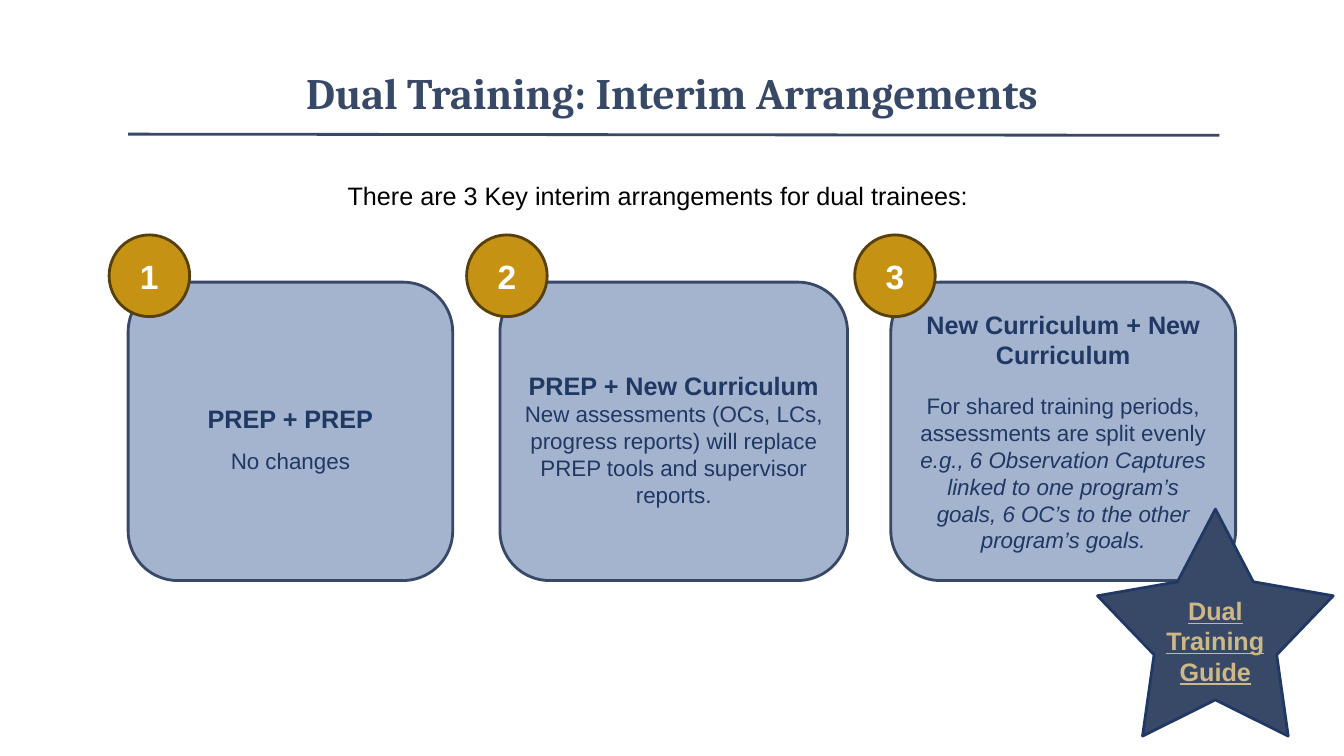
from lxml import etree
from pptx import Presentation
from pptx.dml import color
from pptx.enum import shapes, text
from pptx.oxml import ns
from pptx.util import Cm, Pt

HUES = {"navy": "384967", "ink": "1F3864", "card": "A4B3CE", "gold": "C69214",
        "brown": "574009", "sand": "CEB888", "white": "FFFFFF", "black": "000000"}
MID = text.PP_ALIGN.CENTER


def tint(name):
    """Return the named colour."""
    return color.RGBColor.from_string(HUES[name])


def add_run(para, words, size, hue, face="Arial", **marks):
    """Add one formatted run to a paragraph."""
    run = para.add_run()
    run.text = words
    run.font.name, run.font.size = face, Pt(size)
    run.font.color.rgb = tint(hue)
    for mark, value in marks.items():
        setattr(run.font, mark, value)


def add_form(slide, kind, box, fill, edge):
    """Add a flat outlined shape with centred text."""
    form = slide.shapes.add_shape(kind, *map(Cm, box))
    form.shadow.inherit = False
    form.fill.solid()
    form.fill.fore_color.rgb = tint(fill)
    form.line.color.rgb = tint(edge)
    form.line.width = Pt(2)
    frame = form.text_frame
    frame.word_wrap = True
    frame.vertical_anchor = text.MSO_ANCHOR.MIDDLE
    frame.paragraphs[0].alignment = MID
    return form


def add_head(slide, box):
    """Place the title and the rule below it."""
    left, top, width, height = box
    title = slide.shapes.title
    title.left, title.top, title.width, title.height = map(Cm, box)
    frame = title.text_frame
    frame.auto_size = text.MSO_AUTO_SIZE.NONE
    frame.vertical_anchor = text.MSO_ANCHOR.MIDDLE
    para = frame.paragraphs[0]
    para.alignment = MID
    add_run(para, "Dual Training: Interim Arrangements", 31, "navy", "Cambria", bold=True)
    rule = slide.shapes.add_connector(
        shapes.MSO_CONNECTOR.STRAIGHT, Cm(left + 0.84), Cm(top + 1.65),
        Cm(left + width - 0.74), Cm(top + 1.68))
    rule.line.color.rgb = tint("navy")
    rule.line.width = Pt(2)
    etree.SubElement(rule.element.spPr, ns.qn("a:effectLst"))


def add_lead(slide, box):
    """Place the sentence above the cards."""
    frame = slide.shapes.add_textbox(*map(Cm, box)).text_frame
    frame.word_wrap = True
    add_run(frame.paragraphs[0],
            "There are 3 Key interim arrangements for dual trainees:", 18, "black")


def add_card(slide, box, number, shift, head, pitch, notes):
    """Place a card with its heading, notes and number badge."""
    left, top = box[:2]
    card = add_form(slide, shapes.MSO_SHAPE.ROUNDED_RECTANGLE, box, "card", "navy")
    frame = card.text_frame
    para = frame.paragraphs[0]
    para.line_spacing = pitch
    add_run(para, head, 18, "ink", bold=True)
    for words, slant, space, gap in notes:
        para = frame.add_paragraph()
        para.alignment = MID
        para.line_spacing, para.space_before = space, Pt(gap)
        add_run(para, words, 16, "ink", italic=slant)
    badge = add_form(slide, shapes.MSO_SHAPE.OVAL,
                     (left - shift, top - 1.19, 2.03, 2.06), "gold", "brown")
    add_run(badge.text_frame.paragraphs[0], str(number), 24, "white", bold=True)


def add_star(slide, box):
    """Place the star that names the guide."""
    star = add_form(slide, shapes.MSO_SHAPE.STAR_5_POINT, box, "navy", "ink")
    star.adjustments[0] = 0.26
    add_run(star.text_frame.paragraphs[0], "Dual Training Guide", 18, "sand",
            bold=True, underline=True)


CARDS = [
    (3.23, 8.18, 0.48, "PREP + PREP", 1.5, [("No changes", False, 1.5, 0)]),
    (12.6, 8.76, 0.84, "PREP + New Curriculum", 1.5,
     [("New assessments (OCs, LCs, progress reports) will replace PREP tools "
       "and supervisor reports.", False, 1.0, 0)]),
    (22.45, 8.69, 0.91, "New Curriculum + New Curriculum", 1.0,
     [("For shared training periods, assessments are split evenly", False, 1.0, 16),
      ("e.g., 6 Observation Captures linked to one program’s goals, "
       "6 OC’s to the other program’s goals.", True, 1.0, 0)]),
]


def main():
    """Build and save the slide."""
    deck = Presentation()
    deck.slide_width, deck.slide_height = Cm(33.87), Cm(19.05)
    slide = deck.slides.add_slide(deck.slide_layouts[5])
    add_head(slide, (2.39, 1.73, 29.08, 1.17))
    for number, (left, width, *rest) in enumerate(CARDS, 1):
        add_card(slide, (left, 7.11, width, 7.52), number, *rest)
    add_star(slide, (27.66, 12.83, 5.94, 5.72))
    add_lead(slide, (8.51, 4.42, 16.94, 1.02))
    deck.save("out.pptx")


if __name__ == "__main__":
    main()
